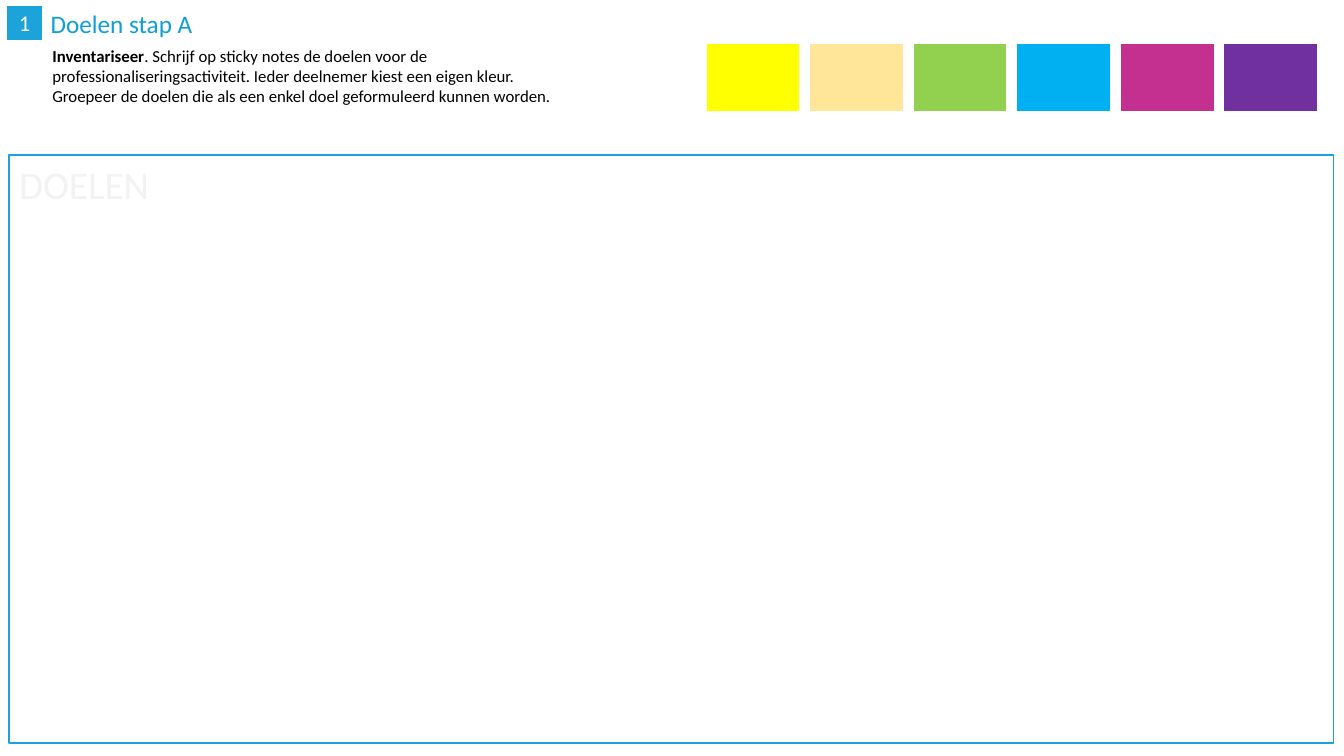
"""Build the slide for goals step A with its sticky note colours."""
import pptx
import pptx.util
import pptx.dml.color
import pptx.enum.shapes
import pptx.enum.text

Cm, Pt = pptx.util.Cm, pptx.util.Pt
RGB = pptx.dml.color.RGBColor.from_string
PP_ALIGN = pptx.enum.text.PP_ALIGN
ANCHOR = pptx.enum.text.MSO_ANCHOR

COLORS = {
    "blue": "1CA3DA",
    "title": "109ED8",
    "white": "FFFFFF",
    "black": "000000",
    "faint": "F2F2F2",
}
NOTES = {
    "yellow": "FFFF00",
    "sand": "FFE699",
    "green": "92D050",
    "sky": "00B0F0",
    "pink": "C4308F",
    "purple": "7030A0",
}


def add_text(sp, text, size=12, color="black", bold=False,
             align=PP_ALIGN.LEFT, anchor=ANCHOR.TOP):
    tf = sp.text_frame
    tf.word_wrap = True
    tf.auto_size = pptx.enum.text.MSO_AUTO_SIZE.NONE
    tf.vertical_anchor = anchor
    p = tf.paragraphs[0]
    p.alignment = align
    r = p.add_run()
    r.text = text
    r.font.name = "Calibri"
    r.font.size = Pt(size)
    r.font.bold = bold
    r.font.color.rgb = RGB(COLORS[color])


def add_rect(s, left, top, width, height, fill, line, weight):
    sp = s.shapes.add_shape(pptx.enum.shapes.MSO_SHAPE.RECTANGLE,
                            Cm(left), Cm(top), Cm(width), Cm(height))
    sp.shadow.inherit = False
    if fill:
        sp.fill.solid()
        sp.fill.fore_color.rgb = RGB(fill)
    else:
        sp.fill.background()
    sp.line.color.rgb = RGB(line)
    sp.line.width = Pt(weight)
    return sp


prs = pptx.Presentation()
prs.slide_width, prs.slide_height = Cm(33.87), Cm(19.05)
s = prs.slides.add_slide(prs.slide_layouts[5])

number = add_rect(s, 0.15, 0.13, 0.94, 0.89, COLORS["blue"], COLORS["white"], 1)
add_text(number, "1", size=16, color="white",
         align=PP_ALIGN.CENTER, anchor=ANCHOR.MIDDLE)

title = s.shapes.title
title.left, title.top, title.width, title.height = Cm(1.02), Cm(0.08), Cm(13.23), Cm(1.02)
add_text(title, "Doelen stap A", size=18, color="title")

intro = s.shapes.add_textbox(Cm(1.07), Cm(1.02), Cm(13.23), Cm(1.8))
add_text(intro, "Inventariseer", bold=True)
add_text(intro, ". Schrijf op sticky notes de doelen voor de professionaliseringsactiviteit. "
                "Ieder deelnemer kiest een eigen kleur. Groepeer de doelen die als een "
                "enkel doel geformuleerd kunnen worden.")

frame = add_rect(s, 0.23, 3.91, 33.38, 14.81, None, COLORS["blue"], 1)
add_text(frame, "DOELEN", size=28, color="faint")

for i, fill in enumerate(NOTES.values()):
    add_rect(s, 17.78 + i * 2.61, 1.09, 2.39, 1.73, fill, COLORS["white"], 1.5)

prs.save("out.pptx")
